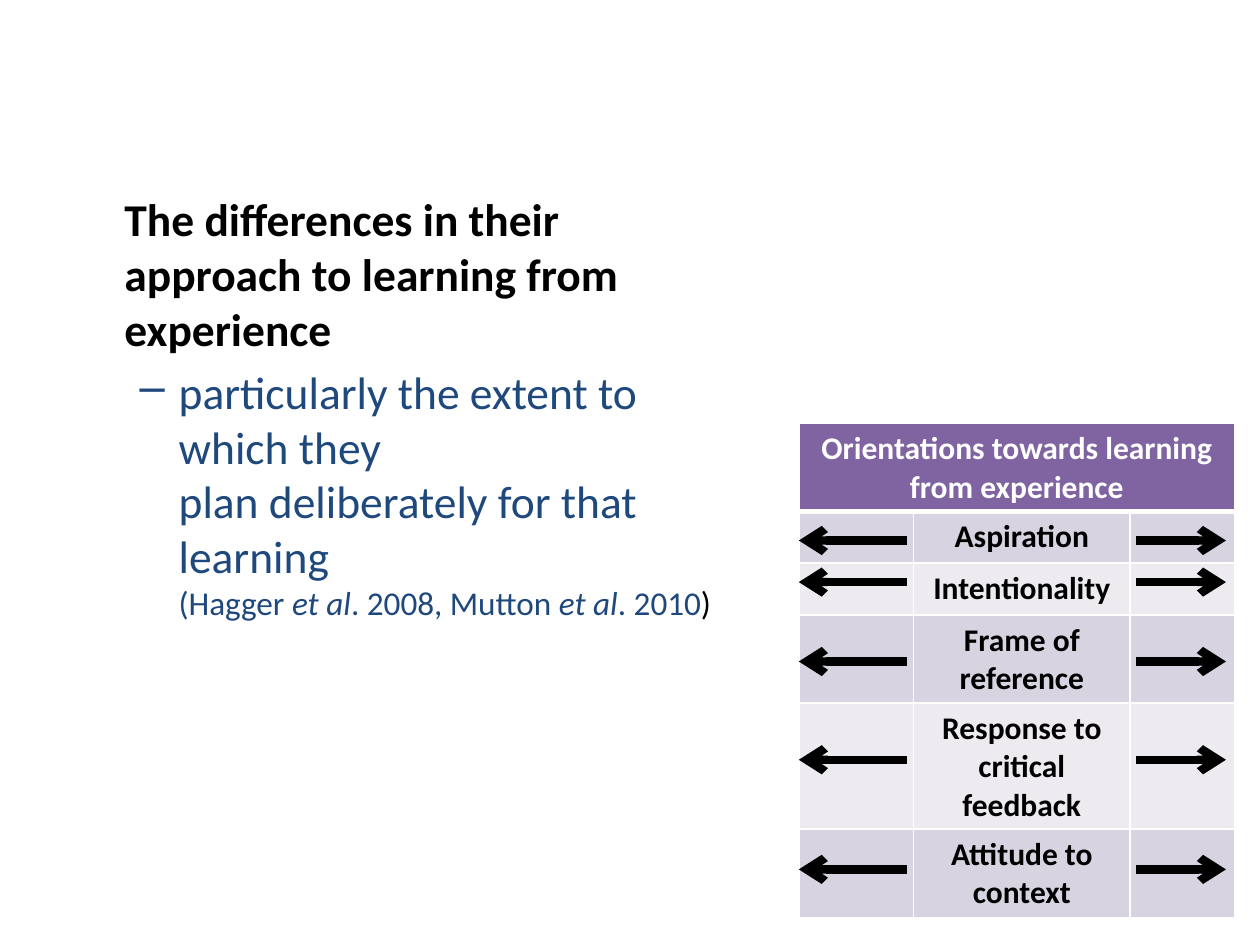
from dataclasses import dataclass

from lxml.etree import SubElement
from pptx import Presentation
from pptx.dml.color import RGBColor
from pptx.enum.shapes import MSO_CONNECTOR
from pptx.enum.text import PP_ALIGN
from pptx.oxml.ns import qn
from pptx.util import Inches, Pt


@dataclass(frozen=True)
class Theme:
    font: str = "Calibri"
    black: RGBColor = RGBColor(0x00, 0x00, 0x00)
    white: RGBColor = RGBColor(0xFF, 0xFF, 0xFF)
    navy: RGBColor = RGBColor(0x1F, 0x49, 0x7D)
    header: RGBColor = RGBColor(0x80, 0x64, 0xA2)
    bands: tuple = (RGBColor(0xD8, 0xD3, 0xE0), RGBColor(0xED, 0xEA, 0xF0))
    body_size: Pt = Pt(26)
    citation_size: Pt = Pt(19)
    table_size: Pt = Pt(18)


THEME = Theme()


def add_text(paragraph, text, color, **font_format):
    run = paragraph.add_run()
    run.text = text
    run.font.color.rgb = color
    for name, value in {"name": THEME.font, **font_format}.items():
        setattr(run.font, name, value)


def add_borders(cell, bottom_width):
    """Draw white cell edges; they must come before the fill in the XML."""
    properties = cell._tc.get_or_add_tcPr()
    for edge, width in {"L": 1, "R": 1, "T": 1, "B": bottom_width}.items():
        border = SubElement(properties, qn(f"a:ln{edge}"), w=str(Pt(width)))
        fill = SubElement(border, qn("a:solidFill"))
        SubElement(fill, qn("a:srgbClr"), val=str(THEME.white))


presentation = Presentation()
presentation.slide_width = Inches(10)
presentation.slide_height = Inches(7.5)
slide = presentation.slides.add_slide(presentation.slide_layouts[6])

# Main statement with its sub-point
body = slide.shapes.add_textbox(Inches(0.51), Inches(1.47), Inches(5.43), Inches(5.67)).text_frame
body.word_wrap = True
statement = body.paragraphs[0]
subpoint = body.add_paragraph()
subpoint.level = 1
for paragraph, margin, indent in ((statement, 0.38, 0), (subpoint, 0.81, -0.31)):
    paragraph.space_before = Pt(5.2)
    paragraph_properties = paragraph._p.get_or_add_pPr()
    paragraph_properties.set("marL", str(Inches(margin)))
    paragraph_properties.set("indent", str(Inches(indent)))
SubElement(subpoint._p.get_or_add_pPr(), qn("a:buChar"), char="–")

add_text(statement, "The differences in their approach to learning from experience",
         THEME.black, size=THEME.body_size, bold=True)
for line in ("particularly the extent to which they ", "plan deliberately for that learning"):
    add_text(subpoint, line, THEME.navy, size=THEME.body_size)
    subpoint.add_line_break()
for text, italic, color in (
    ("(Hagger ", False, THEME.navy),
    ("et al", True, THEME.navy),
    (". 2008, Mutton ", False, THEME.navy),
    ("et al", True, THEME.navy),
    (". 2010", False, THEME.navy),
    (")", False, THEME.black),
):
    add_text(subpoint, text, color, size=THEME.citation_size, italic=italic)

# Orientations table; rows grow to fit their text
orientations = {
    "Aspiration": 4.29,
    "Intentionality": 4.62,
    "Frame of reference": 5.25,
    "Response to critical feedback": 6.03,
    "Attitude to context": 6.9,
}
table_frame = slide.shapes.add_table(len(orientations) + 1, 3, Inches(6.34), Inches(3.36),
                                     Inches(3.46), Inches(3.91))
table = table_frame.table
for column, width in zip(table.columns, (0.91, 1.72, 0.83)):
    column.width = Inches(width)
for row in table.rows:
    row.height = Inches(0.41)
table_frame.height = Inches(3.91)

labels = [("Orientations towards learning from experience", "", "")]
labels += [("", orientation, "") for orientation in orientations]
for row_index, row_labels in enumerate(labels):
    is_header = row_index == 0
    for column_index, label in enumerate(row_labels):
        cell = table.cell(row_index, column_index)
        add_borders(cell, 3 if is_header else 1)
        cell.fill.solid()
        cell.fill.fore_color.rgb = THEME.header if is_header else THEME.bands[(row_index - 1) % 2]
        paragraph = cell.text_frame.paragraphs[0]
        paragraph.alignment = PP_ALIGN.CENTER
        if label:
            add_text(paragraph, label, THEME.white if is_header else THEME.black,
                     size=THEME.table_size, bold=True)
table.cell(0, 0).merge(table.cell(0, 2))

# Arrows pointing outwards on both sides of each orientation
for start, end in ((9.02, 9.73), (7.2, 6.34)):
    for y in orientations.values():
        arrow = slide.shapes.add_connector(MSO_CONNECTOR.STRAIGHT, Inches(start), Inches(y),
                                           Inches(end), Inches(y))
        arrow.line.color.rgb = THEME.black
        arrow.line.width = Pt(4.75)
        SubElement(arrow.line._get_or_add_ln(), qn("a:tailEnd"), type="arrow")
        SubElement(arrow._element.spPr, qn("a:effectLst"))

presentation.save("out.pptx")
